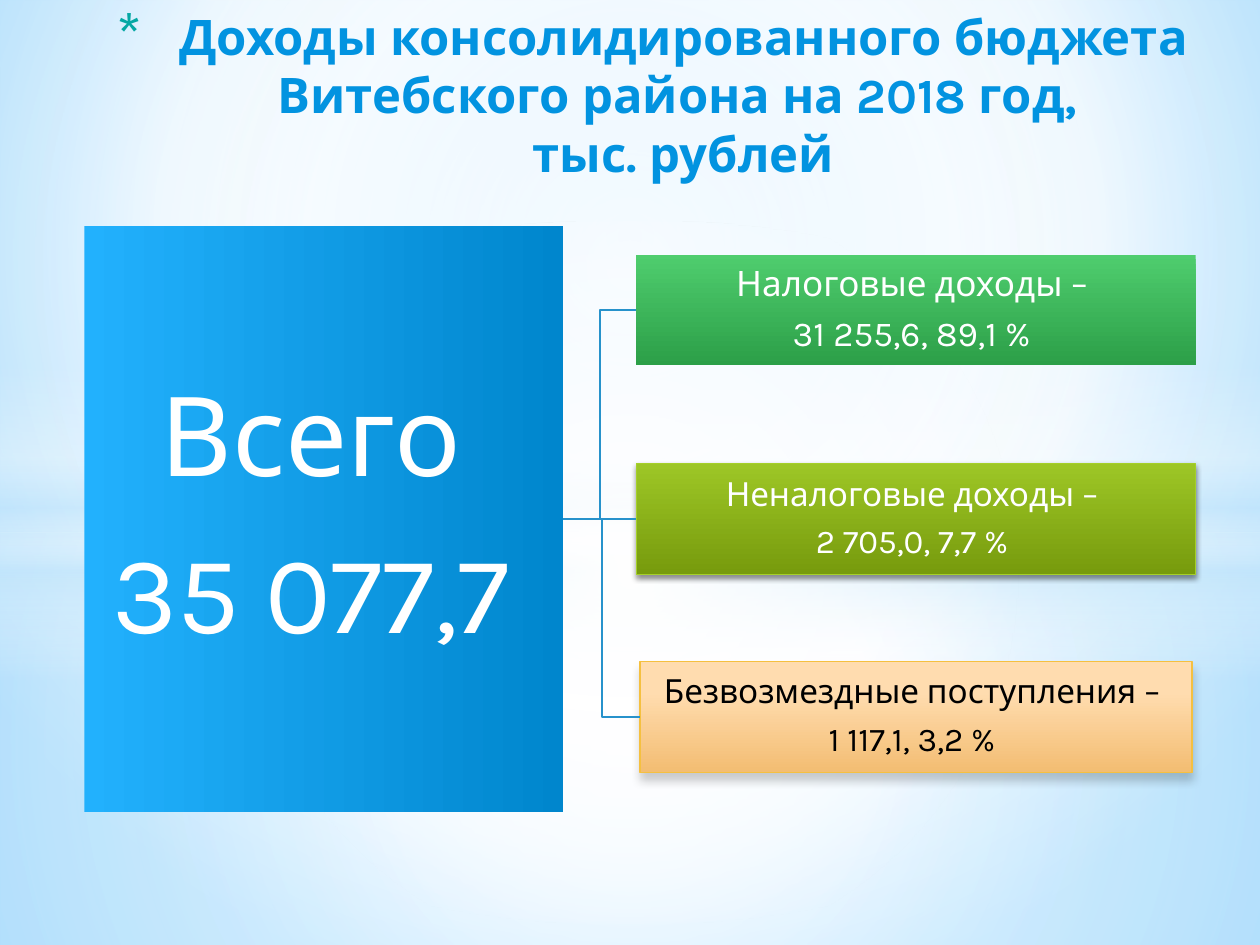
from lxml import etree
from pptx import Presentation
from pptx.dml.color import RGBColor
from pptx.enum.shapes import MSO_CONNECTOR, MSO_SHAPE
from pptx.enum.text import MSO_ANCHOR, PP_ALIGN
from pptx.oxml.ns import qn
from pptx.util import Inches, Pt

RECTANGLE, OVAL = MSO_SHAPE.RECTANGLE, MSO_SHAPE.OVAL
STRAIGHT, ELBOW = MSO_CONNECTOR.STRAIGHT, MSO_CONNECTOR.ELBOW
MIDDLE, TOP = MSO_ANCHOR.MIDDLE, MSO_ANCHOR.TOP
CENTER = PP_ALIGN.CENTER
LEFT_SIDE, RIGHT_SIDE = 1, 3
FONT = "Karla"
COLORS = {
    "white": "FFFFFF", "black": "000000", "title": "0293E0", "bullet": "04A8A4",
    "sky": "B0E0FF", "deep_sky": "6BC5FF", "mist": "C6E7FC", "connector": "2792CB",
    "blue_light": "22B1FD", "blue_dark": "0086CD",
    "green_light": "4FCD6E", "green_dark": "2C9F48",
    "lime_light": "9DC626", "lime_dark": "779B0D", "lime_line": "A5D028",
    "sand_light": "FFDCAF", "sand_dark": "F3BD72", "sand_line": "F5C040",
}
CENTERED = (50, 50, 50, 50)
BOX_LEFT, BOX_WIDTH, BOX_HEIGHT = 5.05, 4.44, 0.88


def rgb(name):
    return RGBColor.from_string(COLORS[name])


def add_node(parent, tag, **attributes):
    node = etree.SubElement(parent, qn(tag))
    for key, value in attributes.items():
        node.set(key, str(value))
    return node


def add_color(parent, name, alpha=100):
    color = add_node(parent, "a:srgbClr", val=COLORS[name])
    if alpha < 100:
        add_node(color, "a:alpha", val=alpha * 1000)


def set_gradient(fill, element, stops, angle=90, focus=None):
    """Stops are (percent, colour[, opacity]); a focus makes the gradient radial."""
    fill.gradient()
    gradient = element.find(".//" + qn("a:gradFill"))
    for child in list(gradient):
        gradient.remove(child)
    gradient.set("rotWithShape", "1")
    stop_list = add_node(gradient, "a:gsLst")
    for position, *color in stops:
        add_color(add_node(stop_list, "a:gs", pos=position * 1000), *color)
    if focus:
        sides = {side: value * 1000 for side, value in zip("ltrb", focus)}
        add_node(add_node(gradient, "a:path", path="circle"), "a:fillToRect", **sides)
    else:
        add_node(gradient, "a:lin", ang=angle * 60000, scaled=0)


def add_panel(slide, left, top, width, height, stops, kind=RECTANGLE,
              angle=90, focus=None, line=None, shadow=None):
    """Shadow is (opacity, blur, distance), the last two in points."""
    shape = slide.shapes.add_shape(
        kind, Inches(left), Inches(top), Inches(width), Inches(height))
    shape.shadow.inherit = False
    set_gradient(shape.fill, shape.element, stops, angle, focus)
    if line:
        shape.line.color.rgb = rgb(line)
        shape.line.width = Pt(0.75)
    else:
        shape.line.fill.background()
    if shadow:
        opacity, blur, distance = shadow
        effects = shape.element.find(".//" + qn("a:effectLst"))
        outer = add_node(effects, "a:outerShdw", blurRad=Pt(blur), dist=Pt(distance),
                         dir=90 * 60000, rotWithShape=0)
        add_color(outer, "black", opacity)
    return shape


def write_text(shape, text, size, color="white", bold=False, anchor=MIDDLE,
               inset=None, line_spacing=None, space_after=0):
    frame = shape.text_frame
    frame.word_wrap = True
    frame.vertical_anchor = anchor
    if inset is not None:
        frame.margin_left = frame.margin_right = Inches(inset)
        frame.margin_top = frame.margin_bottom = Inches(inset)
    frame.text = text
    for paragraph in frame.paragraphs:
        paragraph.alignment = CENTER
        paragraph.line_spacing = line_spacing
        paragraph.space_after = Pt(space_after)
        for run in paragraph.runs:
            run.font.name = FONT
            run.font.size = Pt(size)
            run.font.bold = bold
            run.font.color.rgb = rgb(color)


def write_label(shape, text, size, color="white", inset=0.01):
    write_text(shape, text, size, color, inset=inset, line_spacing=0.9,
               space_after=round(size * 0.35, 1))


def add_bullet(paragraph):
    properties = paragraph._p.get_or_add_pPr()
    properties.set("marL", str(Inches(0.7)))
    properties.set("indent", str(Inches(-0.5)))
    add_color(add_node(properties, "a:buClr"), "bullet")
    add_node(properties, "a:buSzPct", val=128000)
    add_node(properties, "a:buFont", typeface=FONT)
    add_node(properties, "a:buChar", char="*")


def add_title(slide, text):
    box = slide.shapes.add_textbox(Inches(0.51), Inches(0), Inches(9.13), Inches(1.96))
    write_text(box, text, 28, "title", bold=True, anchor=TOP)
    add_bullet(box.text_frame.paragraphs[0])


def join(slide, source, target, kind):
    connector = slide.shapes.add_connector(kind, 0, 0, 0, 0)
    connector.begin_connect(source, RIGHT_SIDE)
    connector.end_connect(target, LEFT_SIDE)
    connector.line.color.rgb = rgb("connector")
    connector.line.width = Pt(1.25)
    add_node(connector.element.spPr, "a:effectLst")


def add_backdrop(slide):
    set_gradient(slide.background.fill, slide.element,
                 [(0, "sky"), (60, "white"), (100, "deep_sky")], focus=(20, 10, 20, 60))
    add_panel(slide, 0, 4.23, 10, 3.27, focus=CENTERED,
              stops=[(0, "white", 91), (37, "white", 76), (100, "mist", 79)])
    add_panel(slide, 0, 0, 10, 4.23, focus=CENTERED,
              stops=[(0, "white", 89), (48, "white", 62), (100, "mist", 79)])
    add_panel(slide, 0, 2.9, 10, 2.5,
              [(0, "white", 0), (29, "white", 30), (45, "mist", 40),
               (55, "white", 26), (65, "mist", 60), (100, "white", 0)])
    add_panel(slide, 0, 1.75, 10, 5.58, [(0, "white"), (54, "white", 0)],
              kind=OVAL, focus=CENTERED)


def main():
    presentation = Presentation()
    presentation.slide_width, presentation.slide_height = Inches(10), Inches(7.5)
    slide = presentation.slides.add_slide(presentation.slide_layouts[6])
    add_backdrop(slide)
    add_title(slide, "Доходы консолидированного бюджета Витебского района "
                     "на 2018 год, \vтыс. рублей")

    total = add_panel(slide, 0.67, 1.795, 3.8, 4.65,
                      [(0, "blue_light"), (100, "blue_dark")], angle=0)
    write_label(total, "Всего \n35 077,7 ", 63, inset=0.04)

    taxes = add_panel(slide, BOX_LEFT, 2.02, BOX_WIDTH, BOX_HEIGHT,
                      [(0, "green_light"), (100, "green_dark")])
    write_label(taxes, "Налоговые доходы – \n31 255,6, 89,1 % ", 20)

    other = add_panel(slide, BOX_LEFT, 3.68, BOX_WIDTH, BOX_HEIGHT,
                      [(0, "lime_light"), (100, "lime_dark")],
                      line="lime_line", shadow=(45, 3.1, 1.8))
    write_label(other, "Неналоговые доходы – \n2 705,0, 7,7 % ", 19)

    grants = add_panel(slide, 5.08, 5.25, 4.38, BOX_HEIGHT,
                       [(28, "sand_light"), (100, "sand_dark")],
                       line="sand_line", shadow=(20, 5, 4))
    write_label(grants, "Безвозмездные поступления – \n1 117,1, 3,2 % ", 19, "black")

    for target, kind in ((taxes, ELBOW), (other, STRAIGHT), (grants, ELBOW)):
        join(slide, total, target, kind)
    presentation.save("out.pptx")


if __name__ == "__main__":
    main()
